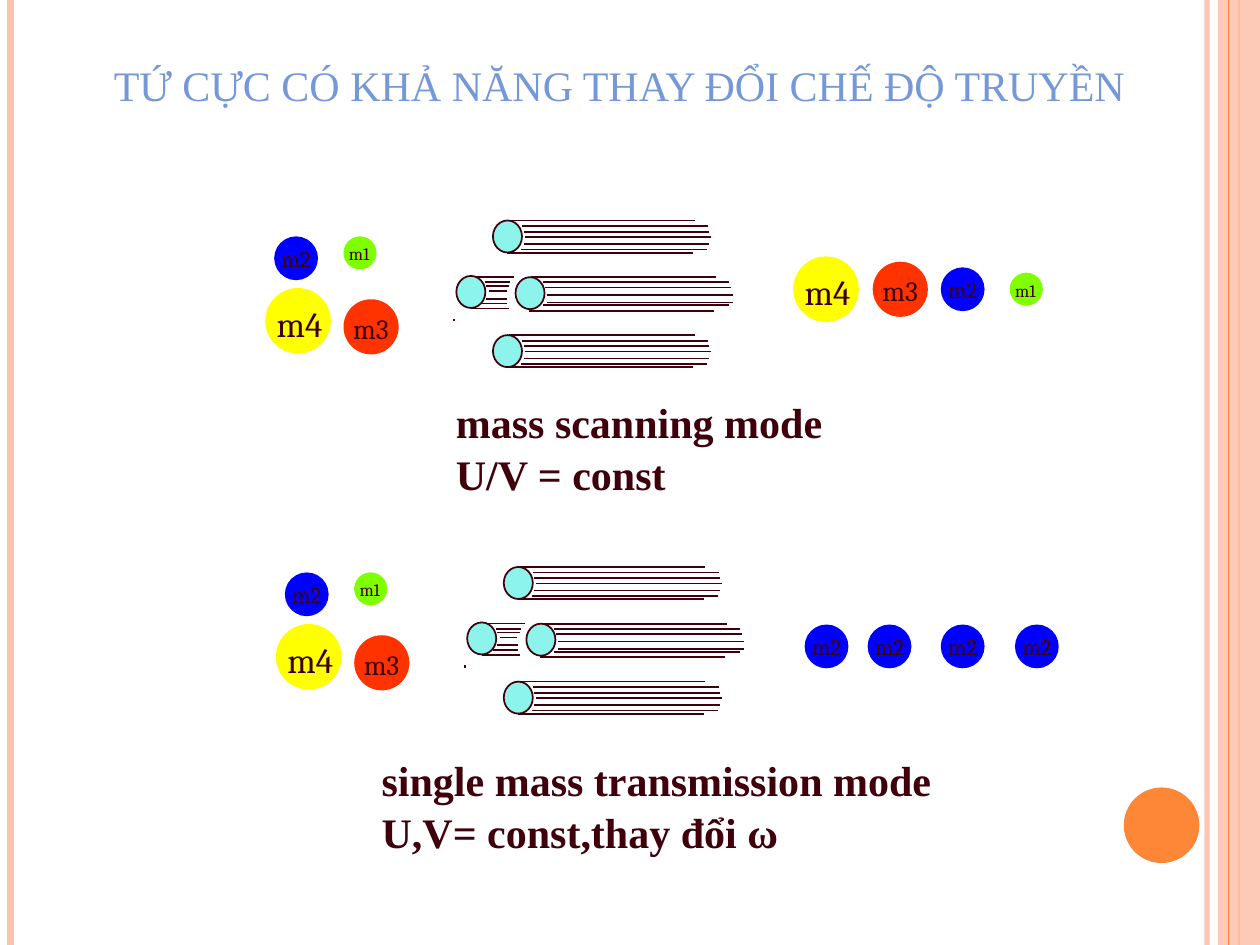
from dataclasses import dataclass

from lxml import etree
from pptx import Presentation
from pptx.dml.color import RGBColor
from pptx.enum import shapes, text
from pptx.oxml import ns
from pptx.util import Pt


@dataclass(frozen=True)
class Theme:
    ink: str = "3F000B"
    title: str = "7598D9"
    accent: str = "FE8637"
    pale: str = "FEC3AE"
    rod: str = "8CF4EA"
    serif: str = "Times New Roman"
    label: str = "Cambria"
    heading_size: int = 24
    stroke: float = 1
    ion_edge: float = 2


THEME = Theme()
WIDTH, HEIGHT = 720, 540

# Ion: colour, diameter, text size, label offset, label size, label insets
IONS = {
    "m1": ("7FFF00", 16.9, 10, (-1.5, 1), (21.6, 15.8), (3.6, 2)),
    "m2": ("0000FF", 23, 13, (-1.8, 1.6), (28.1, 20.9), (5, 2.3)),
    "m3": ("FF3300", 29.5, 16, (-2, 2.8), (35.3, 25.2), (6.5, 3)),
    "m4": ("FFFF00", 35.5, 20, (-2.4, 3.5), (43.2, 31.7), (7.9, 3.6)),
}

# Rod shading strokes: x, y, length, measured from the corner of the rod's end
ROD_LENGTH = 106.2
OUTER_ROD = [(x, y, ROD_LENGTH) for x, y in (
    (9, 0), (16.5, 3.2), (17.5, 6.4), (18.6, 9.4),
    (17.5, 13.4), (16, 16.5), (8, 18.4))]
RIGHT_ROD = [(x, y, ROD_LENGTH) for x, y in (
    (8.6, 0), (15.9, 2.9), (16.9, 5.9), (18, 10.2),
    (18, 14.4), (15.9, 16), (7.5, 19.2))]
LEFT_ROD = [
    (8.6, 0.6, 24.3), (16.5, 3.6, 14.4), (17.2, 5.8, 13), (18.6, 8.6, 10.1),
    (17.2, 13, 11.7), (14.6, 15.8, 14.4), (8.5, 18.6, 21.6)]
QUADRUPOLE = [
    (20.9, 65.5, OUTER_ROD), (33.8, 32.4, RIGHT_ROD),
    (20.9, 0, OUTER_ROD), (0, 31.7, LEFT_ROD)]

# Mixed ions waiting at the entrance
MIXTURE = [("m3", 197.3, 172), ("m1", 197.3, 136.1),
           ("m4", 152.6, 165.6), ("m2", 157.7, 136.1)]


def rgb(color):
    return RGBColor.from_string(color)


def set_alpha(element, percent):
    for clr in element.iter(ns.qn("a:srgbClr")):
        etree.SubElement(clr, ns.qn("a:alpha")).set("val", str(percent * 1000))


def add_line(s, x1, y1, x2, y2, color=THEME.ink, width=THEME.stroke):
    line = s.shapes.add_connector(
        shapes.MSO_CONNECTOR.STRAIGHT, Pt(x1), Pt(y1), Pt(x2), Pt(y2))
    line.line.color.rgb = rgb(color)
    line.line.width = Pt(width)
    etree.SubElement(line._element.spPr, ns.qn("a:effectLst"))
    return line


def add_solid(s, kind, x, y, w, h, fill, edge=None, width=THEME.stroke):
    sp = s.shapes.add_shape(kind, Pt(x), Pt(y), Pt(w), Pt(h))
    sp.shadow.inherit = False
    sp.fill.solid()
    sp.fill.fore_color.rgb = rgb(fill)
    if edge:
        sp.line.color.rgb = rgb(edge)
        sp.line.width = Pt(width)
    else:
        sp.line.fill.background()
    return sp


def format_text(tf, font, size, color, bold=False):
    for p in tf.paragraphs:
        for r in p.runs:
            r.font.name = font
            r.font.size = Pt(size)
            r.font.bold = bold
            r.font.color.rgb = rgb(color)


def add_text(s, x, y, w, h, words, font, size, insets=(7.2, 3.6), bold=False):
    tf = s.shapes.add_textbox(Pt(x), Pt(y), Pt(w), Pt(h)).text_frame
    tf.margin_left = tf.margin_right = Pt(insets[0])
    tf.margin_top = tf.margin_bottom = Pt(insets[1])
    tf.word_wrap = False
    tf.auto_size = text.MSO_AUTO_SIZE.SHAPE_TO_FIT_TEXT
    tf.text = words
    format_text(tf, font, size, THEME.ink, bold)
    return tf


def add_ion(s, name, x, y):
    color, d, size, (dx, dy), (w, h), insets = IONS[name]
    add_solid(s, shapes.MSO_SHAPE.OVAL, x, y, d, d, color, color, THEME.ion_edge)
    add_text(s, x + dx, y + dy, w, h, name, THEME.label, size, insets)


def add_mixture(s, dx=0, dy=0):
    for name, x, y in MIXTURE:
        add_ion(s, name, x + dx, y + dy)


def add_ion_row(s, center_y, ions):
    for name, x in ions:
        add_ion(s, name, x, center_y - IONS[name][1] / 2)


def add_quadrupole(s, x, y):
    for dx, dy, strokes in QUADRUPOLE:
        left, top = x + dx, y + dy
        for sx, sy, length in strokes:
            add_line(s, left + sx, top + sy, left + sx + length, top + sy)
        add_solid(s, shapes.MSO_SHAPE.OVAL, left, top, 16.6, 18.3,
                  THEME.rod, THEME.ink)
    add_line(s, x - 1.4, y + 56.2, x - 1.4, y + 57.6)


def add_caption(s, x, y, w, words):
    tf = add_text(s, x, y, w, 65.5, words, THEME.serif,
                  THEME.heading_size, bold=True)
    tf.paragraphs[1].space_before = Pt(1)


def add_frame(s):
    edge = add_line(s, 689.8, 0, 689.8, HEIGHT, THEME.pale, 3)
    set_alpha(edge._element, 93)
    add_line(s, 6, 0, 6, HEIGHT, THEME.pale, 4.5)
    add_line(s, 708, 0, 708, HEIGHT, THEME.accent, 1.5)
    band = add_solid(s, shapes.MSO_SHAPE.RECTANGLE, 696, 0, 24, HEIGHT, THEME.pale)
    set_alpha(band._element, 87)
    add_line(s, 702, 0, 702, HEIGHT, THEME.accent, 0.75)
    add_solid(s, shapes.MSO_SHAPE.OVAL, 642.2, 450, 43.2, 43.2, THEME.accent)


def set_title(s, words):
    sp = s.shapes.title
    sp.left, sp.top, sp.width, sp.height = Pt(0), Pt(30.2), Pt(708), Pt(36)
    tf = sp.text_frame
    tf.text = words
    tf.auto_size = text.MSO_AUTO_SIZE.NONE
    tf.vertical_anchor = text.MSO_ANCHOR.MIDDLE
    tf.paragraphs[0].alignment = text.PP_ALIGN.CENTER
    format_text(tf, THEME.serif, THEME.heading_size, THEME.title)


def main():
    prs = Presentation()
    prs.slide_width, prs.slide_height = Pt(WIDTH), Pt(HEIGHT)
    s = prs.slides.add_slide(prs.slide_layouts[5])

    # Frame and title
    add_frame(s)
    set_title(s, "TỨ CỰC CÓ KHẢ NĂNG THAY ĐỔI CHẾ ĐỘ TRUYỀN")

    # Mass scanning: every ion passes in turn
    add_quadrupole(s, 260.8, 126)
    add_caption(s, 253.4, 223.2, 226, "mass scanning mode\nU/V = const")
    add_ion_row(s, 165.3, [("m1", 578), ("m3", 499.7), ("m4", 454.3), ("m2", 538.6)])
    add_mixture(s)

    # Single mass transmission: only m2 passes
    add_caption(s, 211, 427.7, 332,
                "single mass transmission mode\nU,V= const,thay đổi ω")
    add_quadrupole(s, 267, 324)
    add_ion_row(s, 369.4, [("m2", x) for x in (460.8, 496.8, 538.6, 581)])
    add_mixture(s, 6.1, 192)

    prs.save("out.pptx")


if __name__ == "__main__":
    main()
